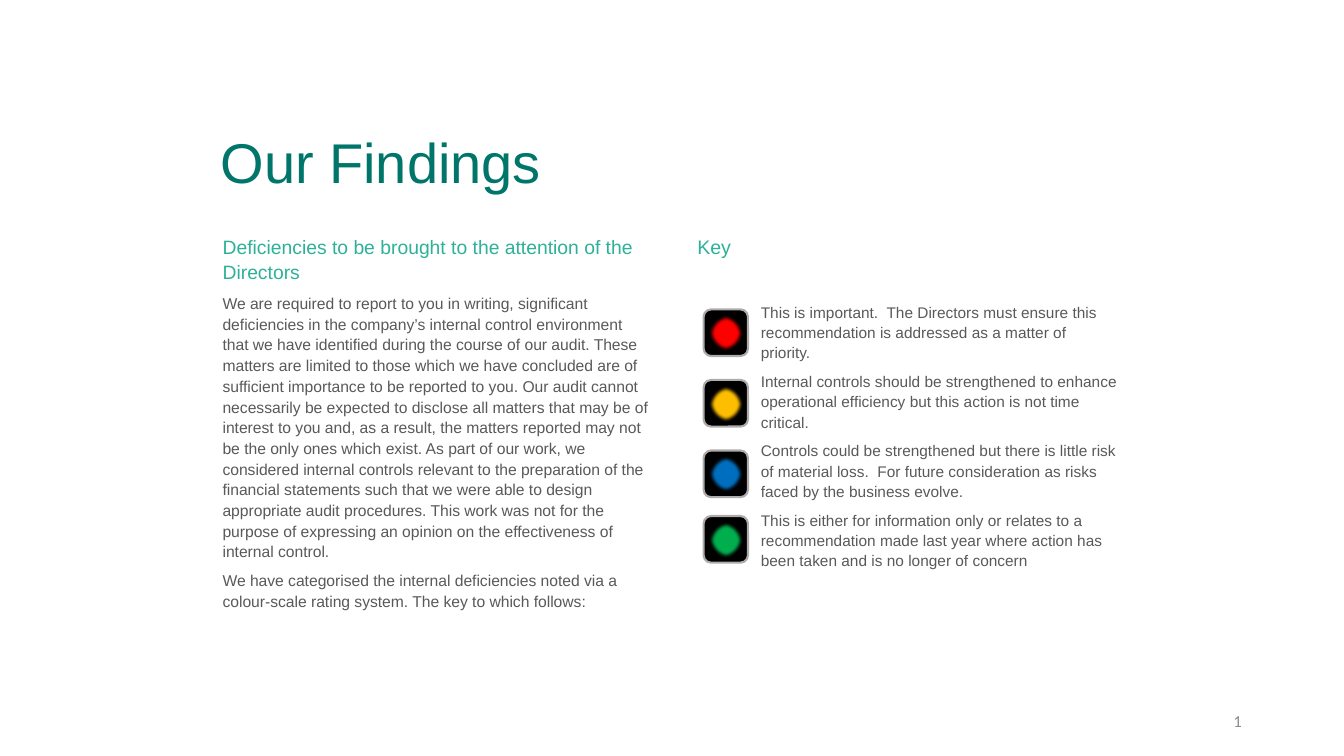
from lxml.etree import SubElement
from pptx import Presentation
from pptx.dml.color import RGBColor
from pptx.enum.shapes import MSO_SHAPE as Kind
from pptx.enum.text import MSO_ANCHOR as Anchor, PP_ALIGN as Align
from pptx.oxml.ns import qn
from pptx.util import Pt

TEAL, MINT, GREY, PALE = "00766B", "2DB198", "595959", "8C8C8C"


def color(code):
    return RGBColor.from_string(code)


class Page:
    """Holds the style and the current slide."""

    font = "Arial"

    def __init__(self, deck):
        self.slide = deck.slides.add_slide(deck.slide_layouts[6])

    def text(self, box, paras, lead=1.1, after=6, align=Align.LEFT,
             anchor=Anchor.TOP, font=None):
        """Each paragraph is a tuple of wording, size and colour."""
        frame = self.slide.shapes.add_textbox(*map(Pt, box)).text_frame
        frame.word_wrap = True
        frame.vertical_anchor = anchor
        for i, (words, size, tint) in enumerate(paras):
            para = frame.add_paragraph() if i else frame.paragraphs[0]
            para.text = words
            para.line_spacing = lead
            para.space_after = Pt(after)
            para.alignment = align
            para.font.name = font or self.font
            para.font.size = Pt(size)
            para.font.color.rgb = color(tint)

    def shape(self, kind, box, fill, line, width):
        item = self.slide.shapes.add_shape(kind, *map(Pt, box))
        item.shadow.inherit = False
        item.fill.solid()
        item.fill.fore_color.rgb = color(fill)
        item.line.color.rgb = color(line)
        item.line.width = Pt(width)
        return item

    def light(self, left, top, tint):
        self.shape(Kind.ROUNDED_RECTANGLE, (left, top, 31.7, 33.3),
                   "000000", "AFABAB", 1.5)
        lamp = self.shape(Kind.OVAL, (left + 3.6, top + 4, 24.5, 25.9),
                          tint, "5B9BD5", 0.5)
        # Blur the rim of the lamp
        effect = lamp._element.spPr.find(qn("a:effectLst"))
        SubElement(effect, qn("a:softEdge"), rad=str(Pt(2.5)))


def main():
    deck = Presentation()
    deck.slide_width, deck.slide_height = Pt(960), Pt(540)
    page = Page(deck)

    # Title
    page.text((150.5, 92.9, 471.6, 56.2), [("Our Findings", 40, TEAL)],
              lead=0.9, after=0)

    # Findings column
    page.text((151.9, 162.7, 320.4, 342.7), [
        ("Deficiencies to be brought to the attention of the Directors",
         13.8, MINT),
        ("We are required to report to you in writing, significant "
         "deficiencies in the company’s internal control environment that we "
         "have identified during the course of our audit. These matters are "
         "limited to those which we have concluded are of sufficient "
         "importance to be reported to you. Our audit cannot necessarily be "
         "expected to disclose all matters that may be of interest to you "
         "and, as a result, the matters reported may not be the only ones "
         "which exist. As part of our work, we considered internal controls "
         "relevant to the preparation of the financial statements such that "
         "we were able to design appropriate audit procedures. This work was "
         "not for the purpose of expressing an opinion on the effectiveness "
         "of internal control.", 11.2, GREY),
        ("We have categorised the internal deficiencies noted via a "
         "colour-scale rating system. The key to which follows:", 11.2, GREY),
    ])

    # Key column
    page.text((491, 162.7, 316, 30), [("Key", 14, MINT)])
    key = [
        (221, "FF0000", "This is important.  The Directors must ensure this "
         "recommendation is addressed as a matter of priority."),
        (271.4, "FFC000", "Internal controls should be strengthened to "
         "enhance operational efficiency but this action is not time "
         "critical."),
        (321.8, "0070C0", "Controls could be strengthened but there is little "
         "risk of material loss.  For future consideration as risks faced by "
         "the business evolve."),
        (368.6, "00B050", "This is either for information only or relates to "
         "a recommendation made last year where action has been taken and is "
         "no longer of concern"),
    ]
    page.text((536.4, 211.5, 270.7, 205),
              [(words, 11, GREY) for _, _, words in key])
    for top, tint, _ in key:
        page.light(502.6, top, tint)

    # Page number
    page.text((678.2, 500.4, 216, 28.8), [("1", 12, PALE)], lead=1, after=0,
              align=Align.RIGHT, anchor=Anchor.MIDDLE, font="Calibri")

    deck.save("out.pptx")


if __name__ == "__main__":
    main()
